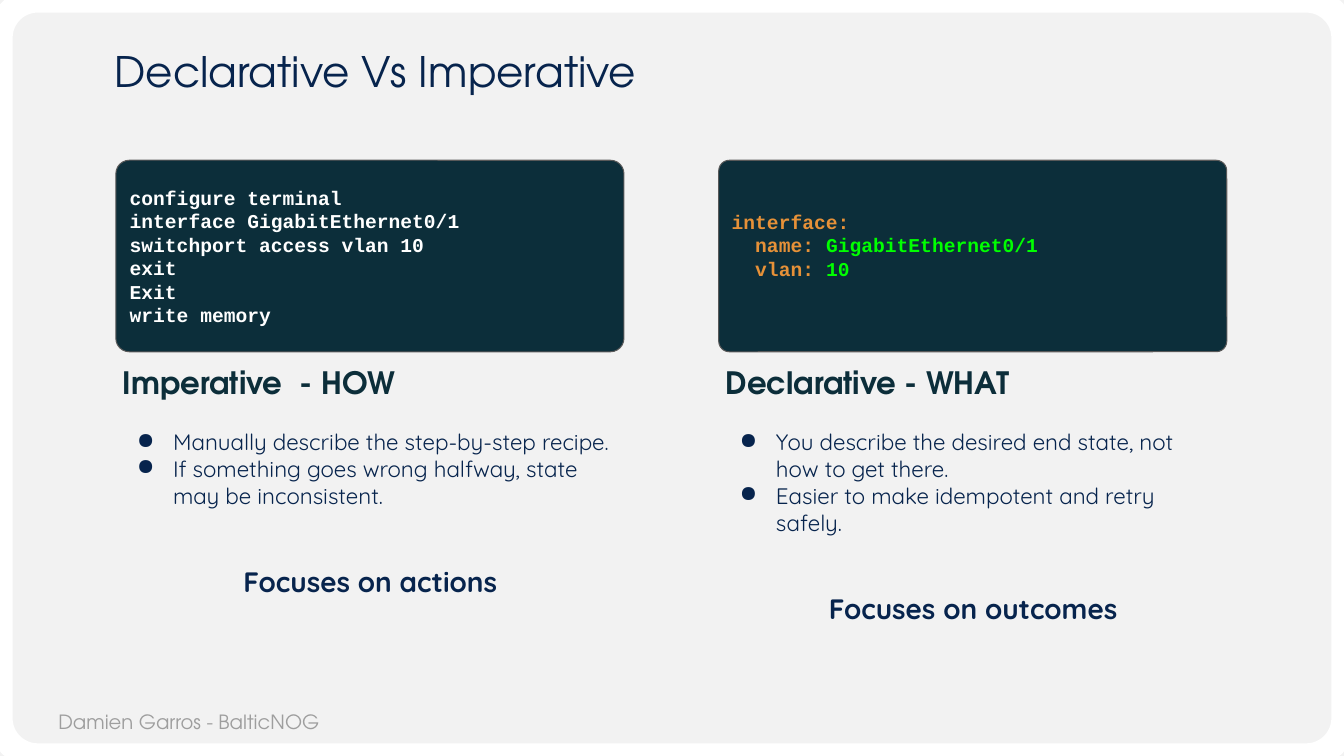
from lxml.etree import SubElement
from pptx import Presentation
from pptx.dml.color import RGBColor
from pptx.enum.shapes import MSO_SHAPE
from pptx.enum.text import MSO_ANCHOR, PP_ALIGN
from pptx.oxml.ns import qn
from pptx.util import Pt

WIDTH, HEIGHT = 960, 540
NAVY, TEAL, GRAY, WHITE = "07244D", "0C2E3A", "9E9E9E", "FFFFFF"
ORANGE, GREEN = "E69138", "00FF00"
HEADING, BODY, CODE = "TeX Gyre Adventor", "Quicksand", "Courier New"
PAD = 7.2
CODE_LINE = 15.9

IMPERATIVE = {
    "code": [
        [("configure terminal", WHITE)],
        [("interface GigabitEthernet0/1", WHITE)],
        [("switchport access vlan 10", WHITE)],
        [("exit", WHITE)],
        [("Exit", WHITE)],
        [("write memory", WHITE)],
    ],
    "radius": 0.07,
    "pad_bottom": PAD,
    "heading": "Imperative  - HOW",
    "bullets": ["Manually describe the step-by-step recipe.",
                "If something goes wrong halfway, state may be inconsistent."],
    "focus": "Focuses on actions",
}
DECLARATIVE = {
    "code": [
        [("interface:", ORANGE)],
        [("  name: ", ORANGE), ("GigabitEthernet0/1", GREEN)],
        [("  vlan: ", ORANGE), ("10", GREEN)],
    ],
    "radius": 0.055,
    "pad_bottom": PAD + CODE_LINE,
    "heading": "Declarative - WHAT",
    "bullets": ["You describe the desired end state, not how to get there.",
                "Easier to make idempotent and retry safely."],
    "focus": "Focuses on outcomes",
}


def rgb(color):
    return RGBColor.from_string(color)


def set_attrs(obj, **values):
    for name, value in values.items():
        setattr(obj, name, value)


def set_padding(tf, bottom=PAD):
    set_attrs(tf, word_wrap=True, margin_left=Pt(PAD), margin_right=Pt(PAD),
              margin_top=Pt(PAD), margin_bottom=Pt(bottom))


def add_text_frame(s, x, y, w, h):
    tf = s.shapes.add_textbox(Pt(x), Pt(y), Pt(w), Pt(h)).text_frame
    set_padding(tf)
    return tf


def next_paragraph(tf, index):
    return tf.add_paragraph() if index else tf.paragraphs[0]


def add_run(p, text, font, size, color, bold=False):
    r = p.add_run()
    r.text = text
    set_attrs(r.font, name=font, size=Pt(size), bold=bold)
    r.font.color.rgb = rgb(color)


def add_line(s, x, y, w, h, text, size, color, bold=False):
    p = add_text_frame(s, x, y, w, h).paragraphs[0]
    add_run(p, text, HEADING, size, color, bold)
    return p


def add_bullet(p, color, left=36, hanging=26):
    pPr = p._p.get_or_add_pPr()
    pPr.set("marL", str(Pt(left)))
    pPr.set("indent", str(-Pt(hanging)))
    SubElement(SubElement(pPr, qn("a:buClr")), qn("a:srgbClr")).set("val", color)
    SubElement(pPr, qn("a:buChar")).set("char", "●")


def add_rounded(s, x, y, w, h, radius, line, line_width, fill=None):
    sp = s.shapes.add_shape(MSO_SHAPE.ROUNDED_RECTANGLE, Pt(x), Pt(y), Pt(w), Pt(h))
    sp.adjustments[0] = radius
    sp.shadow.inherit = False
    sp.line.color.rgb = rgb(line)
    sp.line.width = Pt(line_width)
    if fill:
        sp.fill.solid()
        sp.fill.fore_color.rgb = rgb(fill)
    else:
        sp.fill.background()
    return sp


def add_frame(s):
    """Background, white border, footer."""
    s.background.fill.solid()
    s.background.fill.fore_color.rgb = rgb("F2F2F2")
    add_rounded(s, 0, 0, WIDTH, HEIGHT, 0.05, WHITE, 18)
    add_line(s, 34.6, HEIGHT - 40.3, 466, 32, "Damien Garros - BalticNOG", 14, GRAY)


def add_code(s, x, y, w, h, side):
    sp = add_rounded(s, x, y, w, h, side["radius"], "595959", 0.75, TEAL)
    tf = sp.text_frame
    set_padding(tf, side["pad_bottom"])
    tf.vertical_anchor = MSO_ANCHOR.MIDDLE
    for i, parts in enumerate(side["code"]):
        p = next_paragraph(tf, i)
        p.alignment = PP_ALIGN.LEFT
        for text, color in parts:
            add_run(p, text, CODE, 14, color, True)


def add_points(s, x, y, w, h, side):
    tf = add_text_frame(s, x, y, w, h)
    for i, text in enumerate(side["bullets"]):
        p = next_paragraph(tf, i)
        add_bullet(p, NAVY)
        add_run(p, text, BODY, 16, NAVY)
    p = tf.add_paragraph()
    set_attrs(p, alignment=PP_ALIGN.CENTER, space_before=Pt(40))
    add_run(p, side["focus"], BODY, 20, NAVY, True)


def add_side(s, x, y, w, side):
    """One column: code panel, heading, points."""
    add_code(s, x + 2.2, y, w - 5, 136.8, side)
    add_line(s, x, y + 138.2, w - 74, 39.6, side["heading"], 22, TEAL, True)
    add_points(s, x, y + 184.3, w, 161.3, side)


def build_comparison(s):
    add_frame(s)
    title = add_line(s, 74.9, 32.4, 847.4, 46.8, "Declarative Vs Imperative", 30, NAVY)
    title.line_spacing = 0.8
    for i, side in enumerate((IMPERATIVE, DECLARATIVE)):
        add_side(s, 80.6 + i * 430.6, 114.5, 367.9, side)


def main():
    prs = Presentation()
    set_attrs(prs, slide_width=Pt(WIDTH), slide_height=Pt(HEIGHT))
    build_comparison(prs.slides.add_slide(prs.slide_layouts[6]))
    prs.save("out.pptx")


if __name__ == "__main__":
    main()
